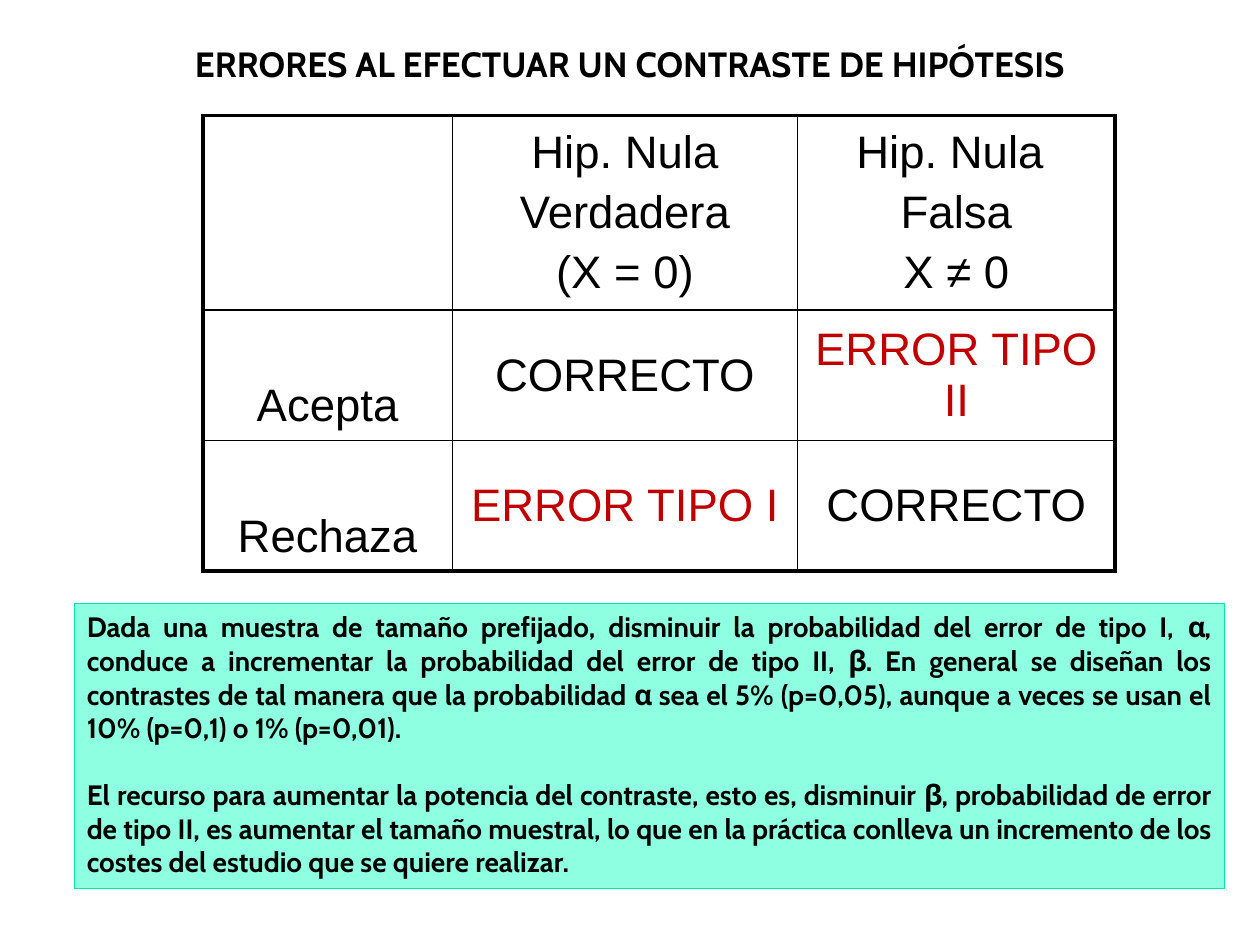
from lxml.etree import SubElement
from pptx import Presentation
from pptx.dml.color import RGBColor
from pptx.enum.shapes import MSO_SHAPE
from pptx.enum.text import MSO_ANCHOR, MSO_AUTO_SIZE, PP_ALIGN
from pptx.oxml.ns import qn
from pptx.util import Cm, Pt

BLACK = RGBColor(0x00, 0x00, 0x00)
RED = RGBColor(0xC0, 0x00, 0x00)
MINT = RGBColor(0x8E, 0xFF, 0xE1)
GREEN = RGBColor(0x00, 0xE4, 0xA8)

THICK, THIN = 2.25, 1
COLUMN_WIDTHS = (5.03, 6.96, 6.4)
ROW_HEIGHTS = (3.92, 2.63, 2.63)
LABEL_TOP_MARGIN = Cm(1.36)

OUTCOMES = (
    ((), ("Hip. Nula", "Verdadera", "(X = 0)"), ("Hip. Nula ", "Falsa", "X ≠ 0")),
    (("Acepta",), ("CORRECTO",), ("ERROR TIPO II",)),
    (("Rechaza",), ("ERROR TIPO I",), ("CORRECTO",)),
)

EXPLANATION = (
    "Dada una muestra de tamaño prefijado, disminuir la probabilidad del error "
    "de tipo I, α, conduce a incrementar la probabilidad del error de tipo II, β. "
    "En general se diseñan los contrastes de tal manera que la probabilidad α sea "
    "el 5% (p=0,05), aunque a veces se usan el 10% (p=0,1) o 1% (p=0,01). ",
    "El recurso para aumentar la potencia del contraste, esto es, disminuir β, "
    "probabilidad de error de tipo II, es aumentar el tamaño muestral, lo que en "
    "la práctica conlleva un incremento de los costes del estudio que se quiere "
    "realizar.",
)


def write_lines(frame, lines, font, size, align, color=BLACK, bold=False, gap=0):
    frame.word_wrap = True
    for index, line in enumerate(lines):
        paragraph = frame.add_paragraph() if index else frame.paragraphs[0]
        paragraph.alignment = align
        if index:
            paragraph.space_before = Pt(gap)
        run = paragraph.add_run()
        run.text = line
        run.font.name = font
        run.font.size = Pt(size)
        run.font.bold = bold
        run.font.color.rgb = color


def add_title(slide, title):
    box = slide.shapes.add_textbox(Cm(1.9), Cm(0.74), Cm(21.6), Cm(1.12))
    write_lines(box.text_frame, [title], "Cabin", 20, PP_ALIGN.CENTER, bold=True)


def set_borders(cell, widths):
    properties = cell._tc.get_or_add_tcPr()
    for position, (side, width) in enumerate(widths.items()):
        border = properties.makeelement(qn(f"a:{side}"), {"w": str(Pt(width))})
        fill = SubElement(border, qn("a:solidFill"))
        SubElement(fill, qn("a:srgbClr"), val=str(BLACK))
        properties.insert(position, border)


def add_outcome_table(slide):
    rows, columns = len(ROW_HEIGHTS), len(COLUMN_WIDTHS)
    table = slide.shapes.add_table(
        rows, columns, Cm(4.09), Cm(2.33),
        Cm(sum(COLUMN_WIDTHS)), Cm(sum(ROW_HEIGHTS))).table
    table.first_row = table.horz_banding = False
    for column, width in zip(table.columns, COLUMN_WIDTHS):
        column.width = Cm(width)
    for row, height in zip(table.rows, ROW_HEIGHTS):
        row.height = Cm(height)
    for r, outcome_row in enumerate(OUTCOMES):
        for c, lines in enumerate(outcome_row):
            cell = table.cell(r, c)
            cell.fill.background()
            cell.vertical_anchor = MSO_ANCHOR.MIDDLE
            if r and c == 0:
                cell.margin_top = LABEL_TOP_MARGIN
            is_error = any(line.startswith("ERROR") for line in lines)
            write_lines(cell.text_frame, lines, "Arial", 26, PP_ALIGN.CENTER,
                        color=RED if is_error else BLACK, gap=5.2)
            set_borders(cell, {
                "lnL": THICK if c == 0 else THIN,
                "lnR": THICK if c == columns - 1 else THIN,
                "lnT": THICK if r == 0 else THIN,
                "lnB": THICK if r == rows - 1 else THIN,
            })


def add_explanation(slide):
    panel = slide.shapes.add_shape(
        MSO_SHAPE.RECTANGLE, Cm(1.5), Cm(12.17), Cm(23.19), Cm(5.74))
    panel.shadow.inherit = False
    panel.fill.solid()
    panel.fill.fore_color.rgb = MINT
    panel.line.color.rgb = GREEN
    panel.line.width = Pt(0.75)
    frame = panel.text_frame
    frame.vertical_anchor = MSO_ANCHOR.TOP
    frame.auto_size = MSO_AUTO_SIZE.SHAPE_TO_FIT_TEXT
    write_lines(frame, EXPLANATION, "Cabin", 16, PP_ALIGN.JUSTIFY,
                bold=True, gap=19.2)


def main():
    presentation = Presentation()
    presentation.slide_width = Cm(25.4)
    presentation.slide_height = Cm(19.05)
    slide = presentation.slides.add_slide(presentation.slide_layouts[6])
    add_title(slide, "ERRORES AL EFECTUAR UN CONTRASTE DE HIPÓTESIS")
    add_outcome_table(slide)
    add_explanation(slide)
    presentation.save("out.pptx")


if __name__ == "__main__":
    main()
